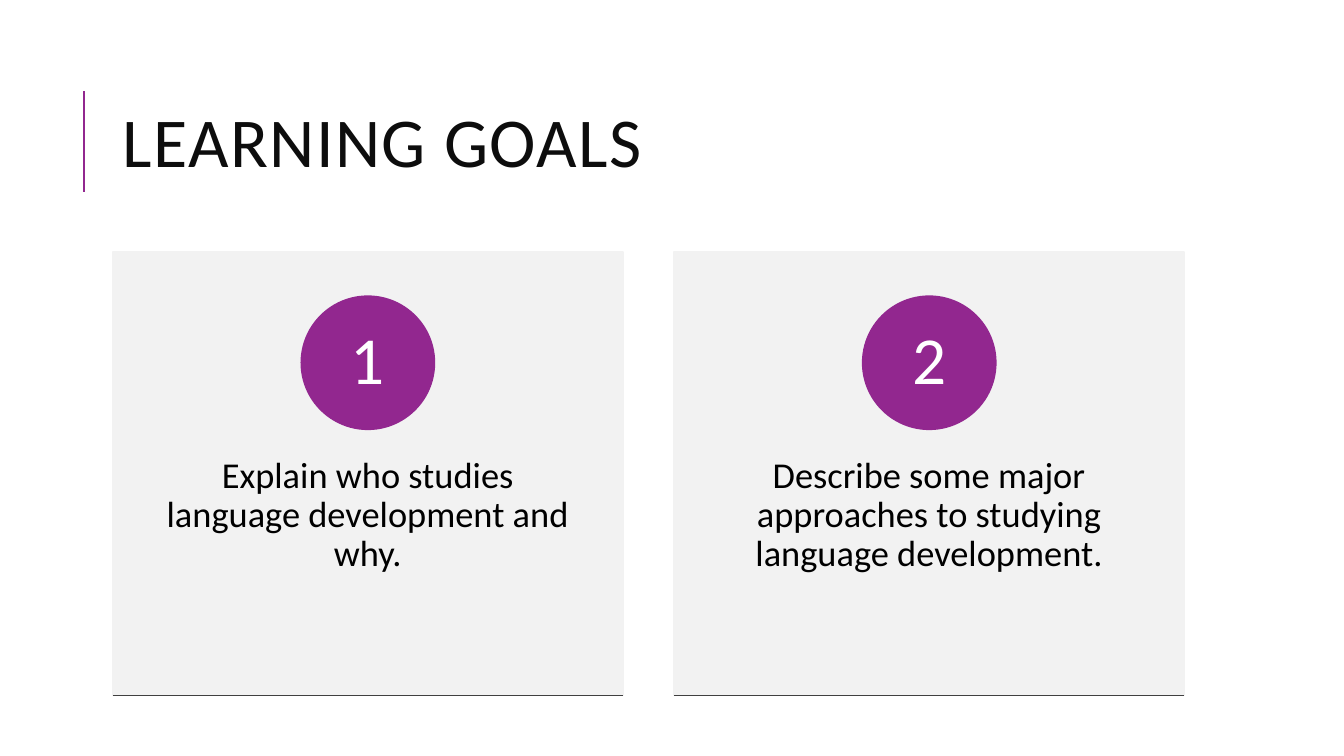
"""Build the learning goals slide with one numbered card per goal."""
from lxml.etree import SubElement
from pptx import Presentation
from pptx.dml.color import RGBColor
from pptx.enum.shapes import MSO_CONNECTOR as CONN, MSO_SHAPE as SHAPE
from pptx.enum.text import MSO_ANCHOR as ANCHOR, PP_ALIGN as ALIGN
from pptx.oxml.ns import qn
from pptx.util import Pt

TITLE = "LEARNING GOALS"
GOALS = [
    "Explain who studies language development and why.",
    "Describe some major approaches to studying language development.",
]
COLORS = {
    "accent": "92278F",
    "card": "F2F2F2",
    "rule": "404040",
    "title": "0D0D0D",
    "body": "000000",
    "number": "FFFFFF",
}
FONT = "Calibri"
CARD_X, CARD_Y, CARD_W, CARD_H = 80.6, 180, 364.3, 316.8
CARD_STEP = 401
CIRCLE_Y, CIRCLE_D = 211.6, 95
GOAL_Y, GOAL_H = 300.2, 190


def rgb(name):
    return RGBColor.from_string(COLORS[name])


def add_line(s, x1, y1, x2, y2, color, width):
    line = s.shapes.add_connector(CONN.STRAIGHT, Pt(x1), Pt(y1), Pt(x2), Pt(y2))
    line.line.color.rgb = rgb(color)
    line.line.width = Pt(width)
    SubElement(line._element.spPr, qn("a:effectLst"))


def add_shape(s, kind, x, y, w, h, color):
    sp = s.shapes.add_shape(kind, Pt(x), Pt(y), Pt(w), Pt(h))
    sp.shadow.inherit = False
    sp.fill.solid()
    sp.fill.fore_color.rgb = rgb(color)
    sp.line.color.rgb = rgb(color)
    sp.line.width = Pt(1.25)
    return sp


def set_text(sp, text, size, color, align, anchor, spacing, inset_x, inset_y):
    tf = sp.text_frame
    tf.word_wrap = True
    tf.vertical_anchor = anchor
    tf.margin_left = tf.margin_right = Pt(inset_x)
    tf.margin_top = tf.margin_bottom = Pt(inset_y)
    p = tf.paragraphs[0]
    p.text = text
    p.alignment = align
    p.line_spacing = spacing
    r = p.runs[0]
    r.font.name = FONT
    r.font.size = Pt(size)
    r.font.color.rgb = rgb(color)
    return r


def add_title(s):
    add_line(s, 60, 136.8, 60, 64.8, "accent", 1.5)
    sp = s.shapes.add_textbox(Pt(CARD_X), Pt(46), Pt(765.4), Pt(118))
    r = set_text(sp, TITLE, 50, "title", ALIGN.LEFT, ANCHOR.MIDDLE, 0.8, 7.2, 3.6)
    r._r.get_or_add_rPr().set("spc", "100")


def add_card(s, index, goal):
    x = CARD_X + index * CARD_STEP
    add_shape(s, SHAPE.RECTANGLE, x, CARD_Y, CARD_W, CARD_H, "card")
    sp = s.shapes.add_textbox(Pt(x), Pt(GOAL_Y), Pt(CARD_W), Pt(GOAL_H))
    set_text(sp, goal, 26, "body", ALIGN.CENTER, ANCHOR.TOP, 0.9, 28.4, 26)
    circle_x = x + (CARD_W - CIRCLE_D) / 2
    sp = add_shape(s, SHAPE.OVAL, circle_x, CIRCLE_Y, CIRCLE_D, CIRCLE_D, "accent")
    set_text(sp, str(index + 1), 48, "number", ALIGN.CENTER, ANCHOR.MIDDLE, 0.9, 7.2, 0.7)
    bottom = CARD_Y + CARD_H
    add_line(s, x, bottom, x + CARD_W, bottom, "rule", 0.75)


def main():
    prs = Presentation()
    prs.slide_width, prs.slide_height = Pt(960), Pt(540)
    s = prs.slides.add_slide(prs.slide_layouts[6])
    add_title(s)
    for index, goal in enumerate(GOALS):
        add_card(s, index, goal)
    prs.save("out.pptx")


if __name__ == "__main__":
    main()
